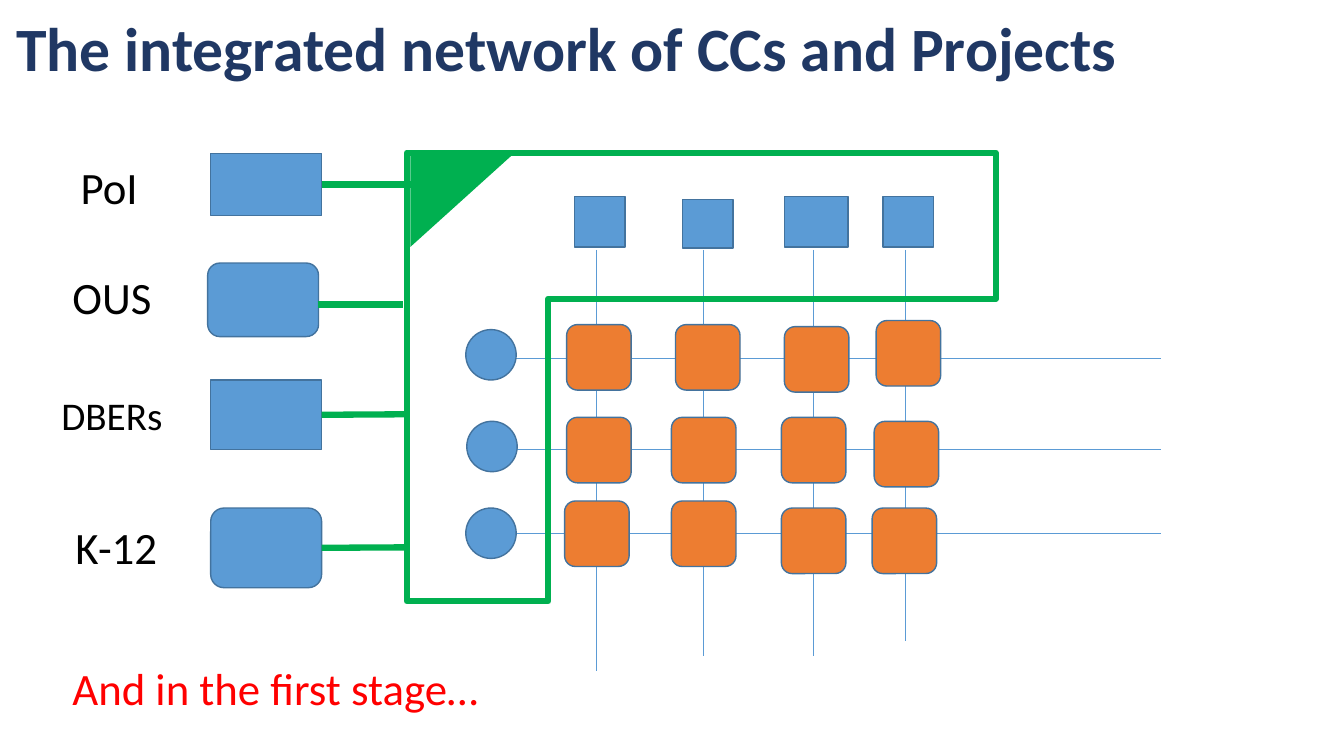
from pptx import Presentation, util as u
from pptx.dml import color
from pptx.enum import shapes, text
from pptx.oxml import ns
from lxml import etree

HUES = {"navy": "203864", "blue": "5B9BD5", "edge": "43739E",
        "orange": "ED7D31", "green": "00B050", "red": "FF0000",
        "black": "000000"}
FONT = "Calibri"
KIND = shapes.MSO_SHAPE


def hue(name):
    return color.RGBColor.from_string(HUES[name])


def write(frame, words, size=32, tint="black", bold=False, space=None,
          anchor=text.MSO_ANCHOR.TOP):
    """Fill a text frame with one formatted, left-aligned paragraph."""
    frame.word_wrap = True
    frame.auto_size = text.MSO_AUTO_SIZE.NONE
    frame.vertical_anchor = anchor
    para = frame.paragraphs[0]
    para.alignment = text.PP_ALIGN.LEFT
    if space:
        para.line_spacing = space
    run = para.add_run()
    run.text = words
    run.font.name = FONT
    run.font.size = u.Pt(size)
    run.font.bold = bold
    run.font.color.rgb = hue(tint)


class Board:
    """Holds the slide and draws each kind of element on it."""

    def __init__(self, deck):
        self.slide = deck.slides.add_slide(deck.slide_layouts[5])

    def title(self, words, x, y, w, h):
        head = self.slide.shapes.title
        head.left, head.top = u.Inches(x), u.Inches(y)
        head.width, head.height = u.Inches(w), u.Inches(h)
        write(head.text_frame, words, size=44, tint="navy", bold=True,
              space=0.9, anchor=text.MSO_ANCHOR.MIDDLE)

    def label(self, words, x, y, w, h, **style):
        box = self.slide.shapes.add_textbox(*map(u.Inches, (x, y, w, h)))
        write(box.text_frame, words, **style)

    def shape(self, kind, x, y, w, h, fill="blue", edge="edge", width=1,
              turn=0, adjust=()):
        item = self.slide.shapes.add_shape(
            kind, *map(u.Inches, (x, y, w, h)))
        item.shadow.inherit = False
        item.rotation = turn
        for i, value in enumerate(adjust):
            item.adjustments[i] = value
        if fill:
            item.fill.solid()
            item.fill.fore_color.rgb = hue(fill)
        else:
            item.fill.background()
        if edge:
            item.line.color.rgb = hue(edge)
            item.line.width = u.Pt(width)
        else:
            item.line.fill.background()
        return item

    def line(self, x1, y1, x2, y2, tint="blue", width=0.5, start=None):
        link = self.slide.shapes.add_connector(
            shapes.MSO_CONNECTOR.STRAIGHT, *map(u.Inches, (x1, y1, x2, y2)))
        link.line.color.rgb = hue(tint)
        link.line.width = u.Pt(width)
        etree.SubElement(link._element.spPr, ns.qn("a:effectLst"))
        if start is not None:
            link.begin_connect(start, 3)


def main():
    deck = Presentation()
    deck.slide_width, deck.slide_height = u.Inches(13.33), u.Inches(7.5)
    board = Board(deck)
    board.title("The integrated network of CCs and Projects",
                0.06, 0.07, 12.97, 0.88)

    # Thin grid lines
    for x, y in ((5.09, 3.56), (5.1, 4.46), (5.12, 5.29)):
        board.line(x, y, 11.52, y)
    for x, end in ((5.92, 6.66), (6.98, 6.51), (8.07, 6.51), (8.98, 6.36)):
        board.line(x, 2.48, x, end)

    # Row heads and column heads
    for x, y in ((4.62, 3.27), (4.63, 4.18), (4.62, 5.04)):
        board.shape(KIND.OVAL, x, y, 0.5, 0.5)
    for x, y, w, h in ((5.7, 1.95, 0.5, 0.5), (6.77, 1.98, 0.5, 0.48),
                       (7.78, 1.95, 0.63, 0.5), (8.76, 1.95, 0.5, 0.5)):
        board.shape(KIND.RECTANGLE, x, y, w, h)

    # Project nodes, row by row
    nodes = (((5.62, 3.22), (6.7, 3.22), (7.78, 3.24), (8.69, 3.18)),
             ((5.62, 4.14), (6.66, 4.14), (7.75, 4.14), (8.67, 4.18)),
             ((5.6, 4.97), (6.66, 4.97), (7.75, 5.04), (8.65, 5.04)))
    for row in nodes:
        for x, y in row:
            board.shape(KIND.ROUNDED_RECTANGLE, x, y, 0.64, 0.65,
                        fill="orange")

    # Green frame and its corner flag
    board.shape(KIND.CORNER, 4.73, 0.82, 4.45, 5.84, fill=None,
                edge="green", width=4.5, turn=90, adjust=(0.315, 0.326))
    board.shape(KIND.RIGHT_TRIANGLE, 4.12, 1.47, 0.93, 1.03, fill="green",
                edge=None, turn=90)

    # Partner boxes: name, size, label place, kind, box place, link, joined
    flat, soft = KIND.RECTANGLE, KIND.ROUNDED_RECTANGLE
    partners = (
        ("PoI", 32, (0.7, 1.54, 1.12, 0.64),
         flat, (2.09, 1.52, 1.1, 0.62), (3.19, 1.83, 4.08, 1.83), True),
        ("OUS", 32, (0.62, 2.63, 1.11, 0.64),
         soft, (2.06, 2.61, 1.1, 0.73), (3.15, 3.02, 4, 3.02), False),
        ("DBERs", 28, (0.51, 3.83, 1.24, 0.57),
         flat, (2.09, 3.77, 1.1, 0.69), (3.19, 4.12, 4.03, 4.11), True),
        ("K-12", 32, (0.65, 5.11, 1.12, 0.64),
         soft, (2.09, 5.04, 1.1, 0.79), (3.19, 5.43, 4.03, 5.43), True))
    for name, size, spot, kind, place, link, joined in partners:
        board.label(name, *spot, size=size)
        box = board.shape(kind, *place)
        board.line(*link, tint="green", width=4.5,
                   start=box if joined else None)

    # Closing remark
    board.label("And in the first stage…", 0.62, 6.51, 4.74, 0.64, tint="red")
    deck.save("out.pptx")


if __name__ == "__main__":
    main()
